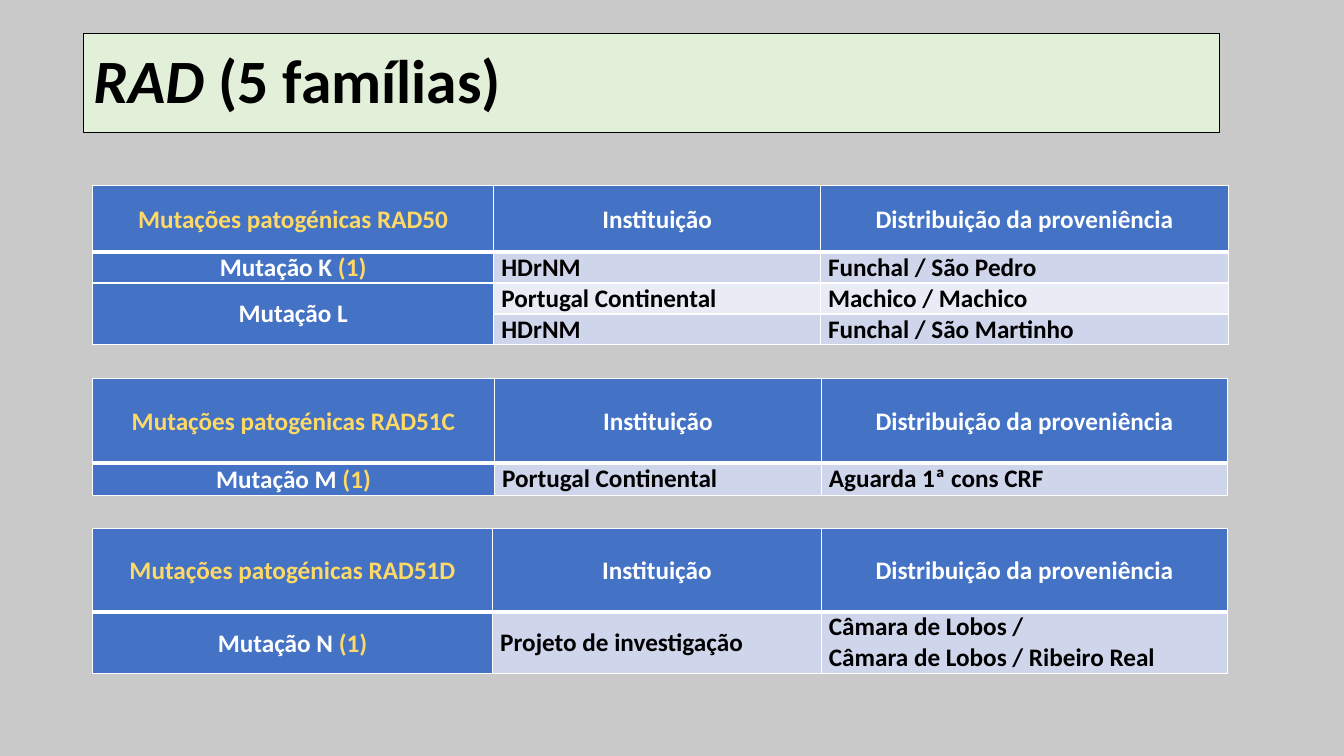
from lxml import etree
from pptx import Presentation
from pptx import util as u
from pptx.dml.color import RGBColor
from pptx.enum import text
from pptx.oxml import ns

BLUE, GOLD, WHITE, BLACK = "4472C4", "FFD966", "FFFFFF", "000000"
BANDS = "CFD5EA", "E9EBF5"
CENTER = text.PP_ALIGN.CENTER


def rgb(value):
    return RGBColor.from_string(value)


def fill(target, value):
    target.fill.solid()
    target.fill.fore_color.rgb = rgb(value)


class Deck:
    """Holds the style and the current slide."""
    font = "Calibri"

    def __init__(self):
        self.prs = Presentation()
        self.prs.slide_width, self.prs.slide_height = u.Inches(13.33), u.Inches(7.5)

    def add_slide(self, background):
        self.slide = self.prs.slides.add_slide(self.prs.slide_layouts[5])
        fill(self.slide.background, background)

    def run(self, paragraph, wording, size, color, italic=False):
        run = paragraph.add_run()
        run.text = wording
        font = run.font
        font.name, font.size, font.bold, font.italic = self.font, u.Pt(size), True, italic
        font.color.rgb = rgb(color)

    def title(self, left, top, width, height, parts):
        """Parts are pairs of wording and italic."""
        title = self.slide.shapes.title
        title.left, title.top = u.Cm(left), u.Cm(top)
        title.width, title.height = u.Cm(width), u.Cm(height)
        fill(title, "E2F0D9")
        title.line.color.rgb = rgb(BLACK)
        title.line.width = u.Pt(0.75)
        frame = title.text_frame
        frame.auto_size = text.MSO_AUTO_SIZE.NONE
        frame.word_wrap = True
        frame.vertical_anchor = text.MSO_ANCHOR.MIDDLE
        heading = frame.paragraphs[0]
        heading.alignment = text.PP_ALIGN.LEFT
        heading.line_spacing = 0.9
        for wording, italic in parts:
            self.run(heading, wording, 44, BLACK, italic)

    def borders(self, cell, top, bottom):
        """White edges; top and bottom are widths in points."""
        props = cell._tc.get_or_add_tcPr()
        edges = {"lnL": 1, "lnR": 1, "lnT": top, "lnB": bottom}
        for place, (edge, width) in enumerate(edges.items()):
            line = etree.Element(ns.qn(f"a:{edge}"), w=str(u.Pt(width)))
            solid = etree.SubElement(line, ns.qn("a:solidFill"))
            etree.SubElement(solid, ns.qn("a:srgbClr"), val=WHITE)
            props.insert(place, line)

    def cell(self, cell, lines, background, alignment=None, spacing=None):
        """Each line is a list of (wording, colour) pairs."""
        fill(cell, background)
        cell.margin_left = cell.margin_right = u.Cm(0.19)
        cell.margin_top = cell.margin_bottom = 0
        cell.vertical_anchor = text.MSO_ANCHOR.MIDDLE
        for number, parts in enumerate(lines):
            frame = cell.text_frame
            paragraph = frame.add_paragraph() if number else frame.paragraphs[0]
            paragraph.alignment = alignment
            if spacing:
                paragraph.line_spacing = spacing
                paragraph.space_after = u.Pt(8)
            for wording, color in parts:
                self.run(paragraph, wording, 18, color)

    def mutations(self, top, widths, heights, gene, rows, spacing=None):
        """Rows are (mutation, count, institution, origin lines); no mutation joins the row above."""
        table = self.slide.shapes.add_table(
            len(heights), len(widths), u.Cm(2.33), u.Cm(top),
            u.Cm(sum(widths)), u.Cm(sum(heights))).table
        table.horz_banding = False
        for column, width in zip(table.columns, widths):
            column.width = u.Cm(width)
        for row, height in zip(table.rows, heights):
            row.height = u.Cm(height)

        headers = ((f"Mutações patogénicas {gene}", GOLD), ("Instituição", WHITE),
                   ("Distribuição da proveniência", WHITE))
        for column, header in enumerate(headers):
            self.cell(table.cell(0, column), [[header]], BLUE, CENTER, 1.07)

        for number, (mutation, count, institution, origins) in enumerate(rows, 1):
            label = table.cell(number, 0)
            if mutation:
                parts = [(mutation, WHITE)] + ([(count, GOLD)] if count else [])
                self.cell(label, [parts], BLUE, CENTER, spacing)
            else:
                table.cell(number - 1, 0).merge(label)
            band = BANDS[(number - 1) % 2]
            self.cell(table.cell(number, 1), [[(institution, BLACK)]], band)
            self.cell(table.cell(number, 2), [[(origin, BLACK)] for origin in origins], band)

        for number in range(len(heights)):
            for column in range(len(widths)):
                self.borders(table.cell(number, column),
                             3 if number == 1 else 1, 3 if number == 0 else 1)


def main():
    deck = Deck()
    deck.add_slide("C9C9C9")
    deck.title(2.1, 0.84, 28.63, 2.51, [("RAD", True), (" (5 famílias)", False)])
    deck.mutations(4.67, (10.11, 8.23, 10.28), (1.68, 0.78, 0.78, 0.78), "RAD50", [
        ("Mutação K ", "(1)", "HDrNM", ["Funchal / São Pedro"]),
        ("Mutação L", "", "Portugal Continental", ["Machico / Machico"]),
        ("", "", "HDrNM", ["Funchal / São Martinho"]),
    ])
    deck.mutations(9.53, (10.13, 8.23, 10.24), (2.13, 0.83), "RAD51C", [
        ("Mutação M ", "(1)", "Portugal Continental", ["Aguarda 1ª cons CRF"]),
    ], spacing=1.07)
    deck.mutations(13.31, (10.08, 8.28, 10.24), (2.11, 1.55), "RAD51D", [
        ("Mutação N ", "(1)", "Projeto de investigação",
         ["Câmara de Lobos /", "Câmara de Lobos / Ribeiro Real"]),
    ], spacing=1.07)
    deck.prs.save("out.pptx")


if __name__ == "__main__":
    main()
